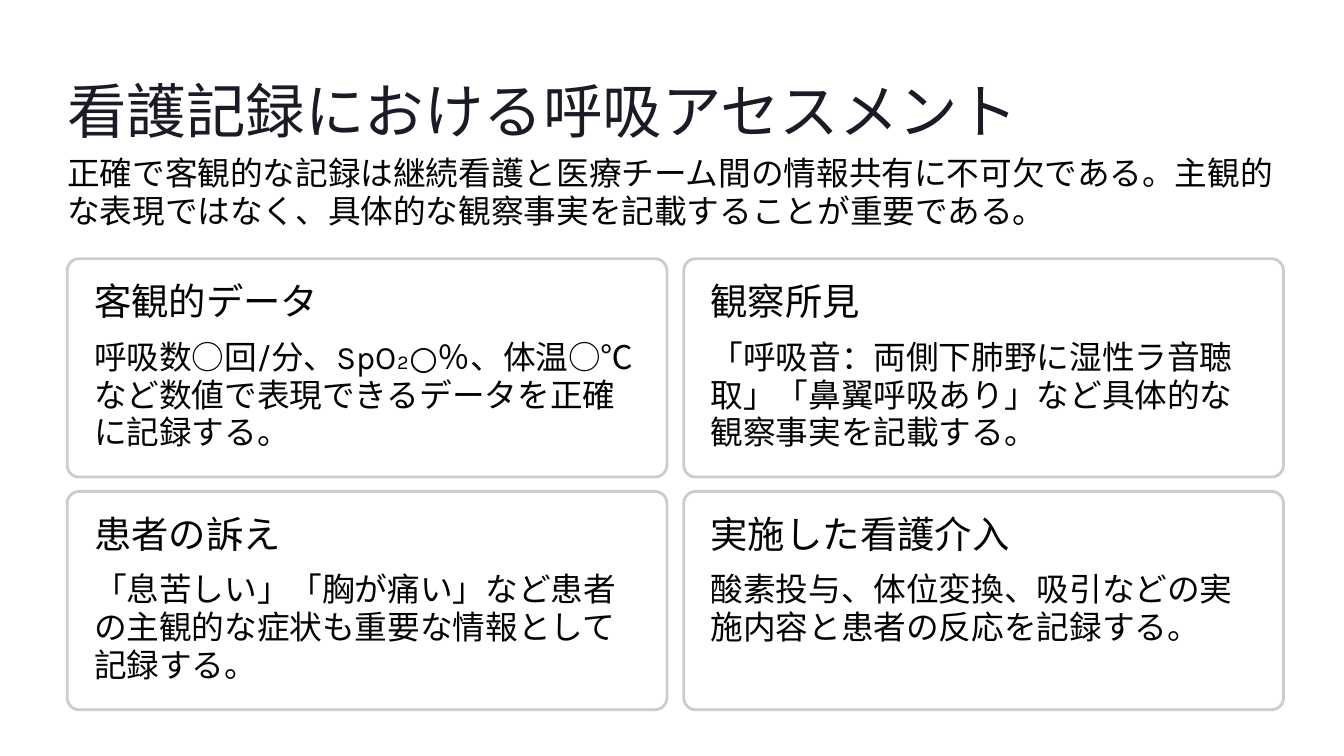
from pptx import Presentation
from pptx.dml.color import RGBColor
from pptx.enum.shapes import MSO_SHAPE as Shape
from pptx.util import Inches, Pt

LEFT, TOP = 0.8, 3.08
WIDE, HIGH = 7.14, 2.6
COL, ROW = 7.34, 2.77
PAD = 0.32
INK = "030303"

CARDS = [
    ("客観的データ", "呼吸数○回/分、SpO₂○％、体温○℃など数値で表現できるデータを正確に記録する。"),
    ("観察所見", "「呼吸音：両側下肺野に湿性ラ音聴取」「鼻翼呼吸あり」など具体的な観察事実を記載する。"),
    ("患者の訴え", "「息苦しい」「胸が痛い」など患者の主観的な症状も重要な情報として記録する。"),
    ("実施した看護介入", "酸素投与、体位変換、吸引などの実施内容と患者の反応を記録する。"),
]


def color(code):
    return RGBColor.from_string(code)


def add_text(slide, text, area, size, lead, face, tone=INK, wrap=True):
    box = slide.shapes.add_textbox(*map(Inches, area))
    frame = box.text_frame
    frame.margin_left = frame.margin_right = 0
    frame.margin_top = frame.margin_bottom = 0
    frame.word_wrap = wrap
    frame.text = text
    para = frame.paragraphs[0]
    para.line_spacing = Pt(lead)
    font = para.runs[0].font
    font.size = Pt(size)
    font.name = face
    font.color.rgb = color(tone)


def add_body(slide, text, area):
    add_text(slide, text, area, 28, 32.5, "Karla")


def add_panel(slide, x, y):
    area = map(Inches, (x, y, WIDE, HIGH))
    panel = slide.shapes.add_shape(Shape.ROUNDED_RECTANGLE, *area)
    panel.adjustments[0] = 0.055
    panel.shadow.inherit = False
    panel.fill.solid()
    panel.fill.fore_color.rgb = color("FFFFFF")
    panel.line.color.rgb = color("CCCCCC")
    panel.line.width = Pt(2.4)


def add_card(slide, index, head, body):
    row, col = divmod(index, 2)
    x, y = LEFT + col * COL, TOP + row * ROW
    add_panel(slide, x, y)
    area = (x + PAD, y + PAD, 3.61, 0.53)
    add_text(slide, head, area, 32, 32, "Inter", wrap=False)
    add_body(slide, body, (x + PAD, y + 0.94, WIDE - 2 * PAD, 1.09))


def main():
    deck = Presentation()
    deck.slide_width, deck.slide_height = Inches(16), Inches(9)
    slide = deck.slides.add_slide(deck.slide_layouts[6])
    add_text(slide, "看護記録における呼吸アセスメント", (LEFT, 0.84, 11.41, 0.89),
             51, 64, "Inter", "1B1B27", wrap=False)
    add_body(slide, "正確で客観的な記録は継続看護と医療チーム間の情報共有に不可欠である。"
             "主観的な表現ではなく、具体的な観察事実を記載することが重要である。",
             (LEFT, 1.84, 14.4, 0.91))
    for index, (head, body) in enumerate(CARDS):
        add_card(slide, index, head, body)
    deck.save("out.pptx")


if __name__ == "__main__":
    main()
